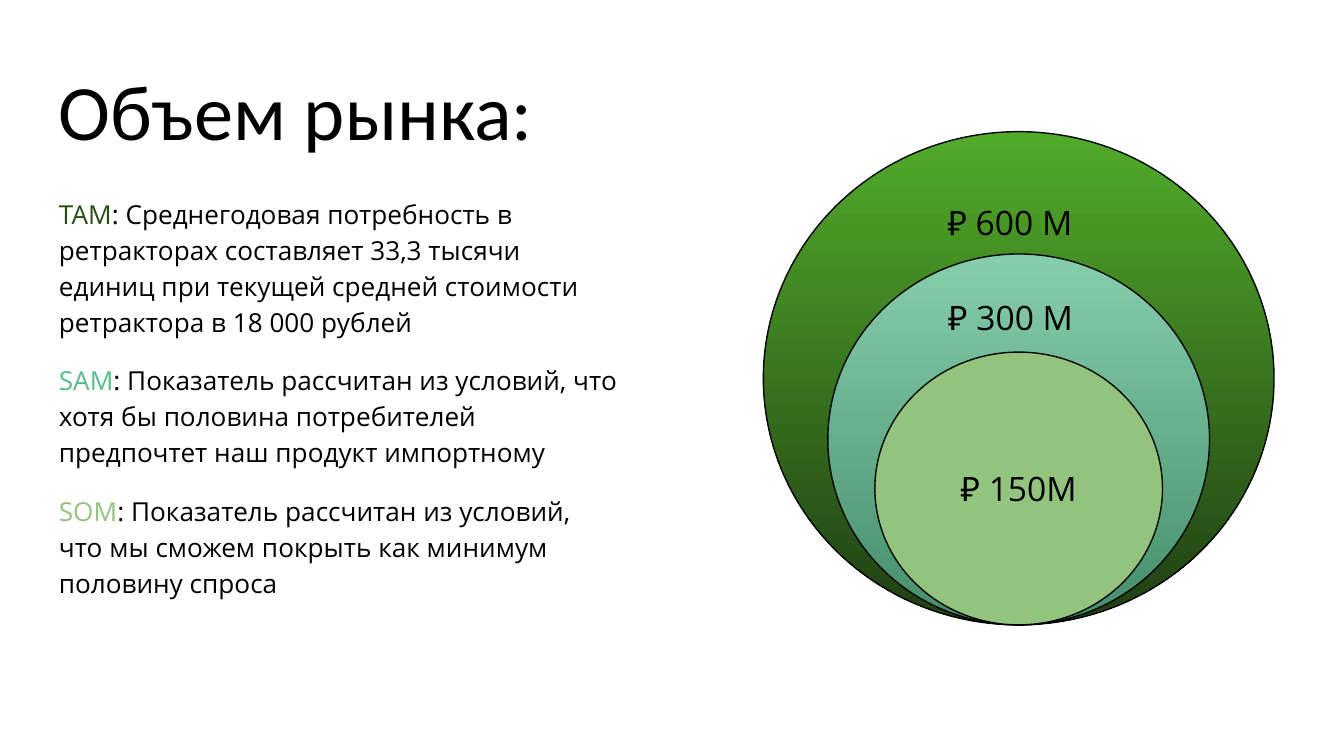
from pptx import Presentation
from pptx.dml.color import RGBColor
from pptx.enum.shapes import MSO_SHAPE
from pptx.enum.text import MSO_ANCHOR, PP_ALIGN
from pptx.util import Inches, Pt

OVAL = MSO_SHAPE.OVAL
TOP, MIDDLE, BOTTOM = MSO_ANCHOR.TOP, MSO_ANCHOR.MIDDLE, MSO_ANCHOR.BOTTOM
CENTER = PP_ALIGN.CENTER
COLORS = {
    "black": "000000",
    "tam": "274E13", "sam": "57BB8A", "som": "93C47D",
    "tam_top": "51AB2A", "tam_low": "203E13",
    "sam_top": "86CEAB", "sam_low": "448E6A",
}


def set_frame(shape, anchor):
    frame = shape.text_frame
    frame.word_wrap = True
    frame.vertical_anchor = anchor
    frame.margin_left = frame.margin_right = Inches(0.1)
    frame.margin_top = frame.margin_bottom = Inches(0.1)
    return frame


def add_run(para, text, size, color="black", font="Open Sans"):
    run = para.add_run()
    run.text = text
    run.font.size = Pt(size)
    run.font.name = font
    run.font.color.rgb = RGBColor.from_string(COLORS[color])


# Page in 16:9
prs = Presentation()
prs.slide_width, prs.slide_height = Inches(10), Inches(10 * 9 / 16)
slide = prs.slides.add_slide(prs.slide_layouts[6])
shapes = slide.shapes

# Title
box = shapes.add_textbox(Inches(0.34), Inches(0.35), Inches(9.32), Inches(0.91))
frame = set_frame(box, BOTTOM)
add_run(frame.paragraphs[0], "Объем рынка:", 42, font="Calibri")

# Market definitions
terms = [
    ("TAM", "tam", ": Среднегодовая потребность в ретракторах составляет 33,3 тысячи "
     "единиц при текущей средней стоимости ретрактора в 18 000 рублей"),
    ("SAM", "sam", ": Показатель рассчитан из условий, что хотя бы половина "
     "потребителей предпочтет наш продукт импортному"),
    ("SOM", "som", ": Показатель рассчитан из условий, что мы сможем покрыть "
     "как минимум половину спроса"),
]
box = shapes.add_textbox(Inches(0.34), Inches(1.34), Inches(4.37), Inches(3.67))
frame = set_frame(box, TOP)
for i, (term, color, text) in enumerate(terms):
    para = frame.paragraphs[0] if i == 0 else frame.add_paragraph()
    para.line_spacing = 1.15
    para.space_before = Pt(12 if i else 0)
    add_run(para, term, 14, color)
    add_run(para, text, 14)
para.space_after = Pt(12)

# Nested ovals share a centre line and a bottom edge
MID, BASE = 7.58, 4.65
ovals = [
    (3.8, 3.67, ["tam_top", "tam_low"]),
    (2.84, 2.76, ["sam_top", "sam_low"]),
    (2.14, 2.03, ["som"]),
]
for width, height, tones in ovals:
    oval = shapes.add_shape(OVAL, Inches(MID - width / 2), Inches(BASE - height),
                            Inches(width), Inches(height))
    oval.shadow.inherit = False
    oval.line.color.rgb = RGBColor.from_string(COLORS["black"])
    oval.line.width = Pt(0.75)
    if len(tones) == 1:
        oval.fill.solid()
        oval.fill.fore_color.rgb = RGBColor.from_string(COLORS[tones[0]])
    else:
        oval.fill.gradient()
        oval.fill.gradient_angle = 270
        for stop, tone in zip(oval.fill.gradient_stops, tones):
            stop.color.rgb = RGBColor.from_string(COLORS[tone])

# Innermost value sits in its oval
para = set_frame(oval, MIDDLE).paragraphs[0]
para.alignment = CENTER
add_run(para, "₽ 150М", 18)

# Outer values
labels = [
    ("₽ 600 М", 6.79, 1.51, 1.45, 0.29, MIDDLE),
    ("₽ 300 М", 5.88, 2.11, 3.28, 0.5, TOP),
]
for text, left, top, width, height, anchor in labels:
    box = shapes.add_textbox(Inches(left), Inches(top), Inches(width), Inches(height))
    para = set_frame(box, anchor).paragraphs[0]
    para.alignment = CENTER
    add_run(para, text, 18)

prs.save("out.pptx")
